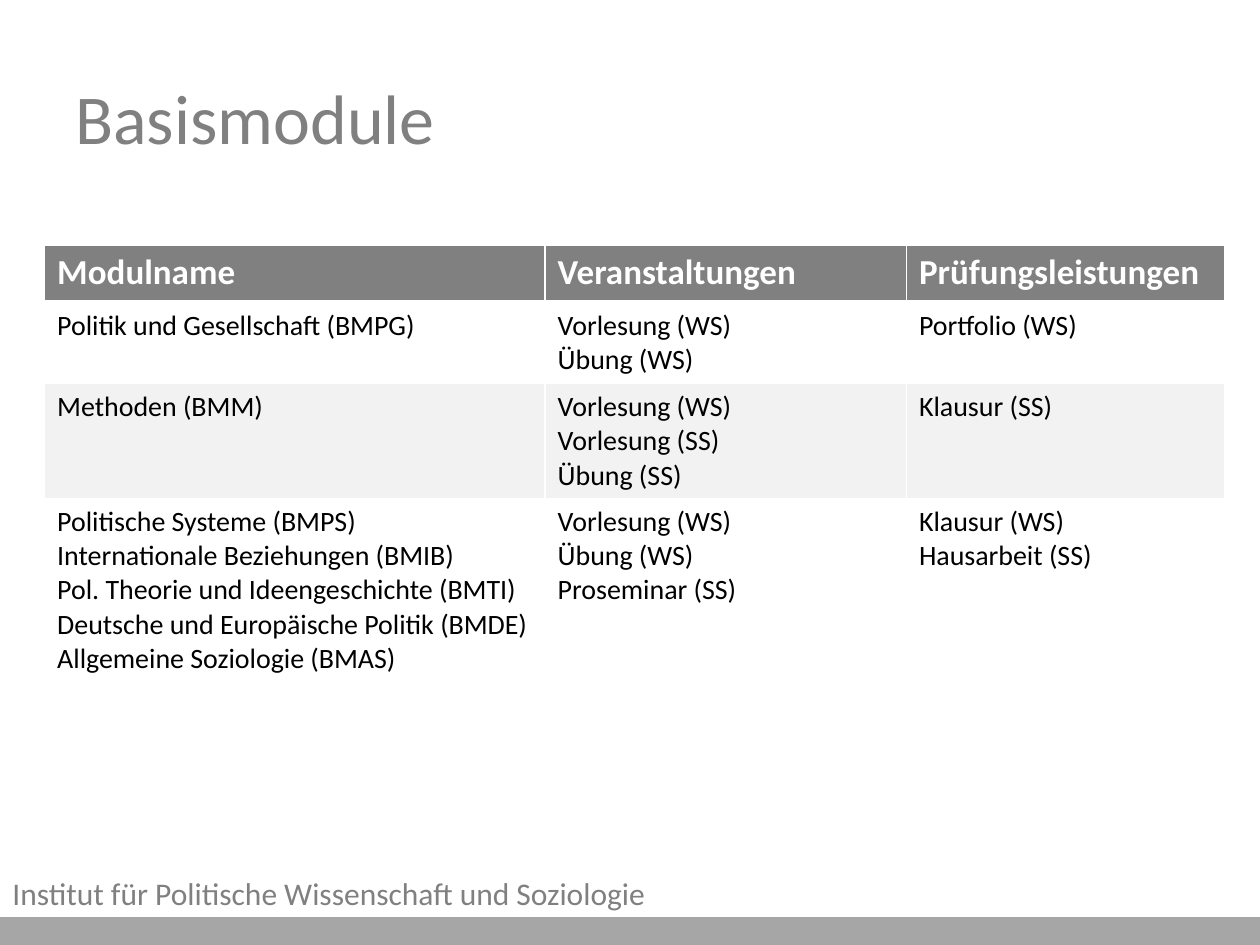
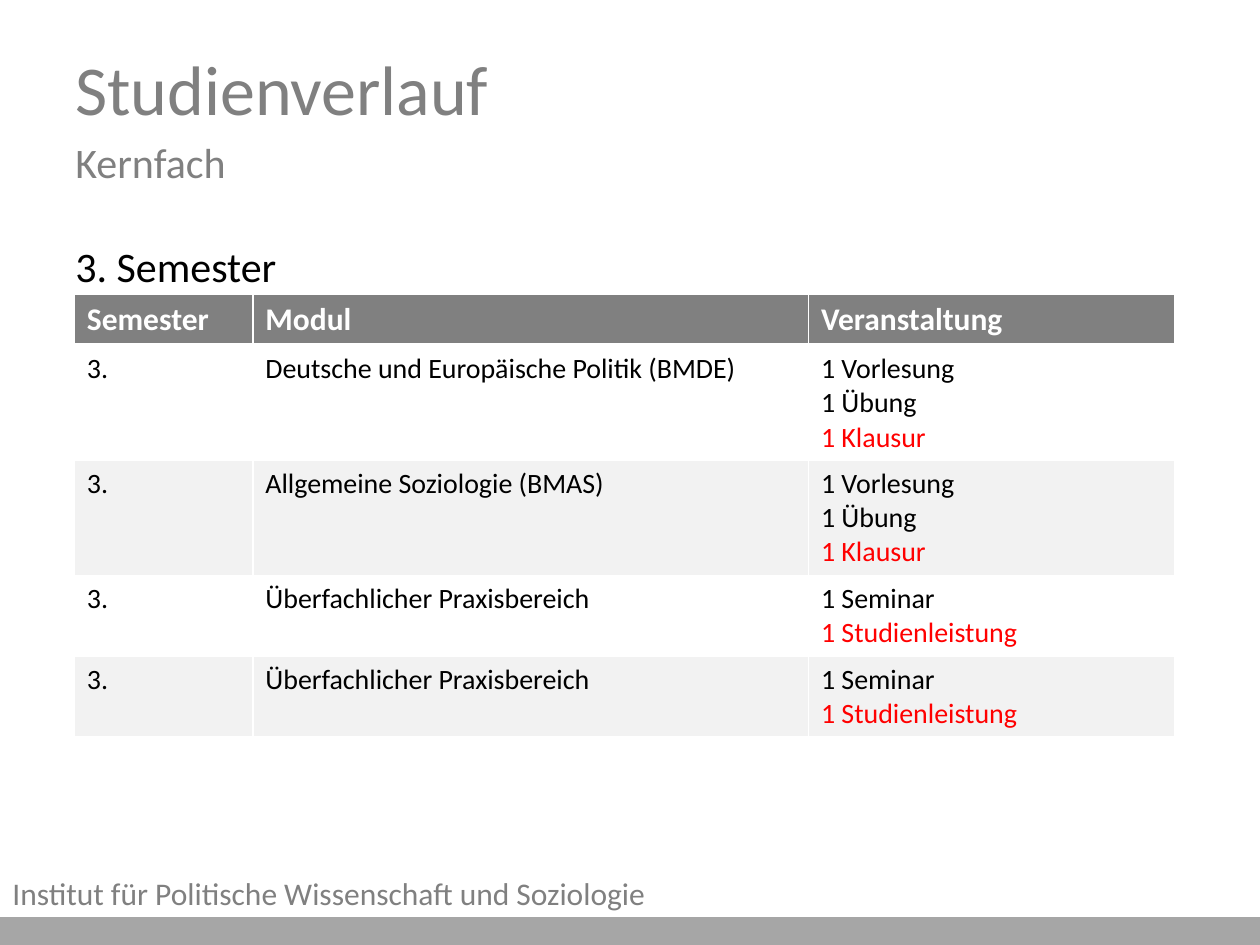
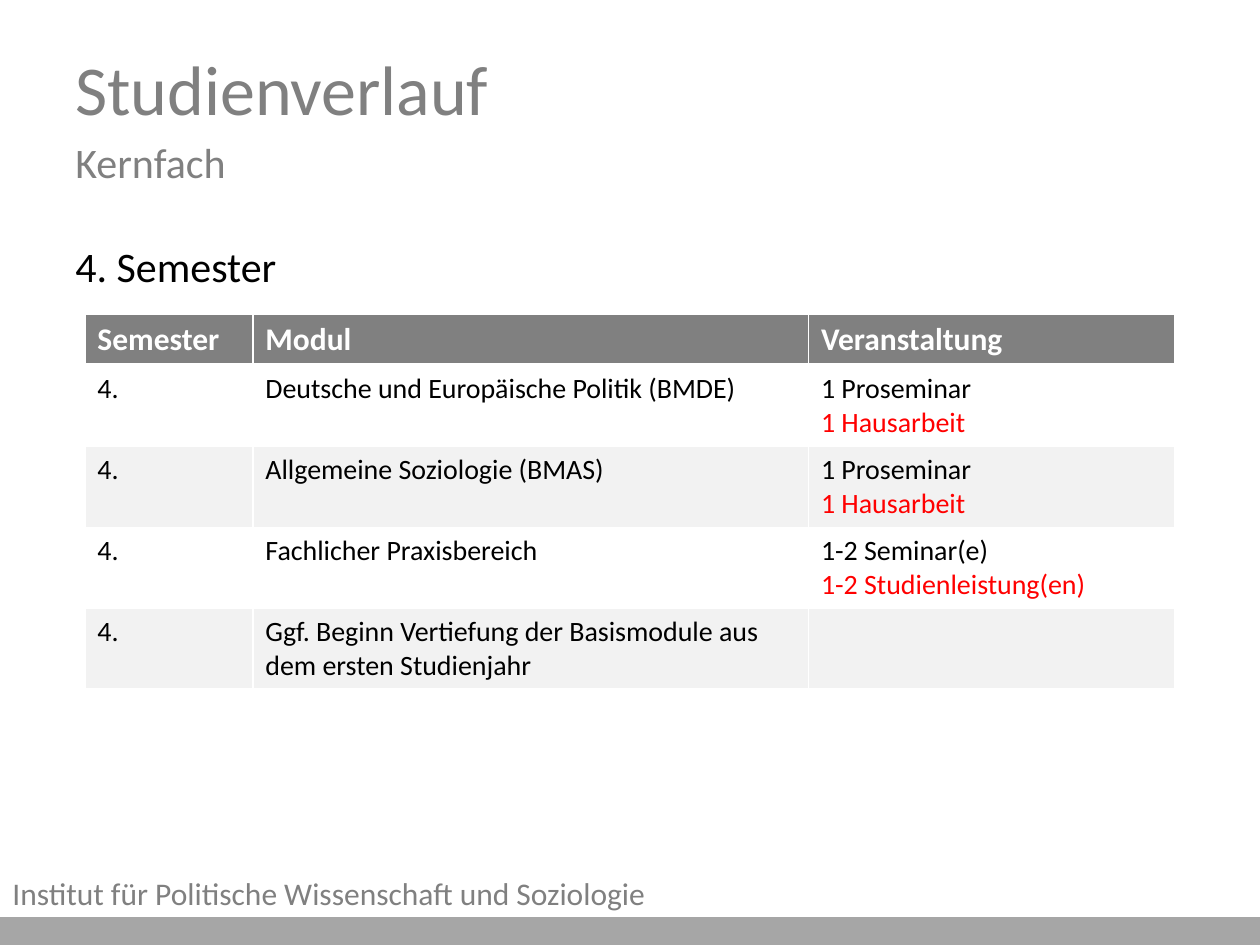
from lxml import etree
from pptx import Presentation
from pptx.dml.color import RGBColor
from pptx.enum.shapes import MSO_SHAPE
from pptx.enum.text import MSO_ANCHOR
from pptx.oxml.ns import qn
from pptx.util import Pt

RECTANGLE = MSO_SHAPE.RECTANGLE
TOP, MIDDLE = MSO_ANCHOR.TOP, MSO_ANCHOR.MIDDLE
GREY, BAND, STRIPE = "808080", "A6A6A6", "F2F2F2"
WHITE, BLACK, RED = "FFFFFF", "000000", "FF0000"
FONT = "Calibri"
INSTITUTE = "Institut für Politische Wissenschaft und Soziologie"
LINE_HEIGHT, CELL_PADDING = 19.5, 7.2
PLAN_HEADER = ["Semester", "Modul", "Veranstaltung"]

# In each row, a cell holds its lines separated by "\n".
pages = [
    dict(
        title="Basismodule", subtitle="", semester="",
        left=25.5, top=140, widths=[286, 206.5, 182], header_size=20, header_height=33,
        header=["Modulname", "Veranstaltungen", "Prüfungsleistungen"],
        rows=[
            (2, "Politik und Gesellschaft (BMPG)", "Vorlesung (WS)\nÜbung (WS)", "Portfolio (WS)"),
            (3, "Methoden (BMM)", "Vorlesung (WS)\nVorlesung (SS)\nÜbung (SS)", "Klausur (SS)"),
            (5, "Politische Systeme (BMPS)\nInternationale Beziehungen (BMIB)\n"
                "Pol. Theorie und Ideengeschichte (BMTI)\n"
                "Deutsche und Europäische Politik (BMDE)\nAllgemeine Soziologie (BMAS)",
             "Vorlesung (WS)\nÜbung (WS)\nProseminar (SS)", "Klausur (WS)\nHausarbeit (SS)"),
        ],
    ),
    dict(
        title="Studienverlauf", subtitle="Kernfach", semester="3. Semester",
        left=42.5, top=168, widths=[102, 317.5, 209.5], header_size=18, header_height=29.5,
        header=PLAN_HEADER,
        rows=[
            (3, "3.", "Deutsche und Europäische Politik (BMDE)", "1 Vorlesung\n1 Übung\n1 Klausur"),
            (3, "3.", "Allgemeine Soziologie (BMAS)", "1 Vorlesung\n1 Übung\n1 Klausur"),
            (2, "3.", "Überfachlicher Praxisbereich", "1 Seminar\n1 Studienleistung"),
            (2, "3.", "Überfachlicher Praxisbereich", "1 Seminar\n1 Studienleistung"),
        ],
    ),
    dict(
        title="Studienverlauf", subtitle="Kernfach", semester="4. Semester",
        left=48.5, top=179.5, widths=[96, 317.5, 209.5], header_size=18, header_height=29.5,
        header=PLAN_HEADER,
        rows=[
            (2, "4.", "Deutsche und Europäische Politik (BMDE)", "1 Proseminar\n1 Hausarbeit"),
            (2, "4.", "Allgemeine Soziologie (BMAS)", "1 Proseminar\n1 Hausarbeit"),
            (2, "4.", "Fachlicher Praxisbereich", "1-2 Seminar(e)\n1-2 Studienleistung(en)"),
            (2, "4.", "Ggf. Beginn Vertiefung der Basismodule aus dem ersten Studienjahr", ""),
        ],
    ),
]


def write(frame, text, size=16, color=BLACK, bold=False, space_before=0):
    """Add one paragraph, using the empty first one if the frame has no text."""
    paragraph = frame.add_paragraph() if frame.text else frame.paragraphs[0]
    paragraph.space_before = Pt(space_before)
    run = paragraph.add_run()
    run.text = text
    run.font.name, run.font.size, run.font.bold = FONT, Pt(size), bold
    run.font.color.rgb = RGBColor.from_string(color)


def add_text_area(slide, left, top, width, height, anchor=TOP):
    frame = slide.shapes.add_textbox(Pt(left), Pt(top), Pt(width), Pt(height)).text_frame
    frame.word_wrap = True
    frame.vertical_anchor = anchor
    return frame


prs = Presentation()
prs.slide_width, prs.slide_height = Pt(720), Pt(540)

for page in pages:
    slide = prs.slides.add_slide(prs.slide_layouts[6])

    band = slide.shapes.add_shape(RECTANGLE, Pt(0), Pt(525), Pt(720), Pt(15))
    band.shadow.inherit = False
    band.fill.solid()
    band.fill.fore_color.rgb = RGBColor.from_string(BAND)
    band.line.color.rgb = RGBColor.from_string(BAND)
    band.line.width = Pt(2)
    write(add_text_area(slide, 0, 496, 510.5, 29), INSTITUTE, size=18, color=GREY)

    heading = add_text_area(slide, 36, 21.6, 648, 90, MIDDLE)
    write(heading, page["title"], size=40, color=GREY)
    if page["subtitle"]:
        write(heading, page["subtitle"], size=24, color=GREY, space_before=4)
    if page["semester"]:
        semester = add_text_area(slide, 36, 126, 648, 356.4)
        semester.margin_top = Pt(11.6)
        write(semester, page["semester"], size=24)

    heights = [page["header_height"]]
    heights += [lines * LINE_HEIGHT + CELL_PADDING for lines, *_ in page["rows"]]
    grid = [page["header"]] + [cells for _, *cells in page["rows"]]
    table = slide.shapes.add_table(
        len(grid), len(page["widths"]), Pt(page["left"]), Pt(page["top"]),
        Pt(sum(page["widths"])), Pt(sum(heights))).table
    for column, width in zip(table.columns, page["widths"]):
        column.width = Pt(width)
    for row, height in zip(table.rows, heights):
        row.height = Pt(height)

    for r, texts in enumerate(grid):
        is_header = r == 0
        for c, text in enumerate(texts):
            cell = table.cell(r, c)
            properties = cell._tc.get_or_add_tcPr()
            for side in ("lnL", "lnR", "lnT", "lnB"):
                thick = (is_header and side == "lnB") or (r == 1 and side == "lnT")
                border = etree.SubElement(properties, qn(f"a:{side}"), w=str(Pt(3 if thick else 1)))
                fill = etree.SubElement(border, qn("a:solidFill"))
                etree.SubElement(fill, qn("a:srgbClr"), val=WHITE)
            cell.fill.solid()
            cell.fill.fore_color.rgb = RGBColor.from_string(
                GREY if is_header else WHITE if r % 2 else STRIPE)

            if is_header:
                write(cell.text_frame, text, size=page["header_size"], color=WHITE, bold=True)
            elif text:
                *courses, last = text.split("\n")
                for course in courses:
                    write(cell.text_frame, course)
                is_exam = page["semester"] and c == 2
                write(cell.text_frame, last, color=RED if is_exam else BLACK)

prs.save("out.pptx")
